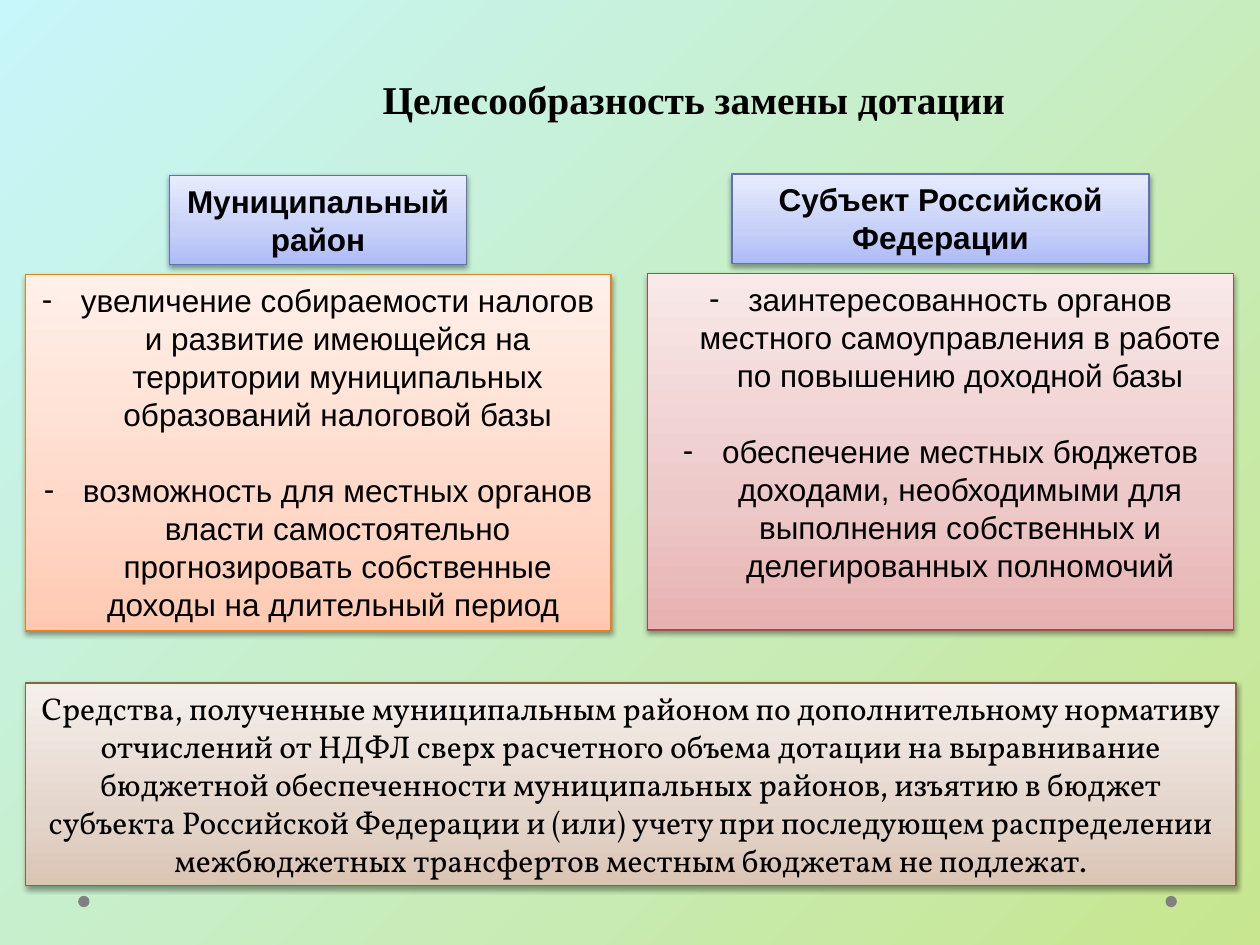
from copy import deepcopy
from lxml.etree import SubElement as Sub
from pptx import Presentation
from pptx.dml.color import RGBColor as Rgb
from pptx.enum.shapes import MSO_SHAPE as Kind
from pptx.enum.text import MSO_ANCHOR as Anchor, PP_ALIGN as Align
from pptx.oxml.ns import qn
from pptx.util import Inches, Pt

COLS, ROWS = 100, 75
WIDE, HIGH = Inches(10), Inches(7.5)
LEAD = Pt(21.7)
HUES = {
    "back": ["C7F6FB", "C7E68F"],
    "head": ["ADBBF6", "C5CFF8", "E8ECFD", "5C72B2"],
    "peach": ["FFC9B1", "FFD8C8", "FFF0EA", "E6811C"],
    "rose": ["E8B0B0", "EDC8C8", "F9E9E9", "9A4E4E"],
    "sand": ["DAC4B4", "E4D5CB", "F5EFEB", "836445"],
    "dot": "808080",
    "ink": "000000",
}


def span(box):
    """Turn a box in grid columns and rows into slide lengths."""
    x, y, w, h = box
    return [int(n) for n in (x * WIDE / COLS, y * HIGH / ROWS, w * WIDE / COLS, h * HIGH / ROWS)]


def tint(fill, hues, angle):
    """Set the stop colours and the angle of a gradient fill."""
    for stop, hue in zip(fill.gradient_stops, hues):
        stop.color.rgb = Rgb.from_string(hue)
    fill.gradient_angle = angle


def shade(card):
    """Give a card a soft shadow below it."""
    card.shadow.inherit = False
    glow = Sub(card._element.spPr.find(qn("a:effectLst")), qn("a:outerShdw"),
               blurRad=str(Pt(3.1)), dist=str(Pt(1.6)), dir="5400000", rotWithShape="0")
    hue = Sub(glow, qn("a:srgbClr"), val=HUES["ink"])
    Sub(hue, qn("a:alpha"), val="38000")


def write(para, text, font, size=18, bold=False, lead=LEAD):
    """Fill a centred paragraph with one run."""
    para.alignment = Align.CENTER
    para.line_spacing = lead
    run = para.add_run()
    run.text = text
    run.font.name, run.font.size, run.font.bold = font, Pt(size), bold
    run.font.color.rgb = Rgb.from_string(HUES["ink"])


def dash(para):
    """Give a paragraph a hanging dash."""
    props = para._p.get_or_add_pPr()
    props.set("marL", str(Inches(0.31)))
    props.set("indent", str(Inches(-0.31)))
    Sub(props, qn("a:buFont"), typeface="Arial")
    Sub(props, qn("a:buChar"), char="-")


def card(slide, box, hues, texts, font="Arial", bold=False, list_=False):
    """Place a gradient card with its paragraphs."""
    shape = slide.shapes.add_shape(Kind.RECTANGLE, *span(box))
    shape.fill.gradient()
    stops = shape._element.spPr.find(".//" + qn("a:gsLst"))
    stops.insert(1, deepcopy(stops[0]))
    stops[1].set("pos", "35000")
    tint(shape.fill, hues[:3], 90)
    shape.line.color.rgb = Rgb.from_string(hues[3])
    shape.line.width = Pt(0.75)
    shade(shape)
    frame = shape.text_frame
    frame.word_wrap = True
    frame.vertical_anchor = Anchor.TOP
    for n, text in enumerate(texts):
        para = frame.add_paragraph() if n else frame.paragraphs[0]
        if list_:
            dash(para)
        if n:
            para.space_before = LEAD
        write(para, text, font, bold=bold)


def column(slide, box, wide, hues, head, items):
    """Place a centred heading card above a card of points."""
    x, y, w, h = box
    card(slide, (x + (w - wide) / 2, y, wide, 7.1), HUES["head"], [head], bold=True)
    card(slide, (x, y + 7.9, w, h - 7.9), hues, items, list_=True)


def title(slide, box, text):
    """Place the slide heading."""
    frame = slide.shapes.add_textbox(*span(box)).text_frame
    frame.word_wrap = True
    frame.vertical_anchor = Anchor.BOTTOM
    write(frame.paragraphs[0], text, "Times New Roman", 22.5, True, Pt(58))


def dots(slide, box):
    """Place a dot at each end of the box."""
    x, y, w, h = box
    for left in (x, x + w - h):
        dot = slide.shapes.add_shape(Kind.OVAL, *span((left, y, h, h)))
        dot.shadow.inherit = False
        dot.fill.solid()
        dot.fill.fore_color.rgb = Rgb.from_string(HUES["dot"])
        dot.line.fill.background()


def main():
    """Build the slide and save it."""
    deck = Presentation()
    deck.slide_width, deck.slide_height = WIDE, HIGH
    slide = deck.slides.add_slide(deck.slide_layouts[6])
    back = slide.background.fill
    back.gradient()
    tint(back, HUES["back"], 315)
    dots(slide, (6.2, 71.1, 87.2, 0.9))
    title(slide, (10.1, 4.1, 90, 6.1), "Целесообразность замены дотации")
    card(slide, (2, 54.2, 96.1, 16.1), HUES["sand"], [
        "Средства, полученные муниципальным районом по дополнительному нормативу "
        "отчислений от НДФЛ сверх расчетного объема дотации на выравнивание "
        "бюджетной обеспеченности муниципальных районов, изъятию в бюджет "
        "субъекта Российской Федерации и (или) учету при последующем распределении "
        "межбюджетных трансфертов местным бюджетам не подлежат."], "Vollkorn")
    column(slide, (2, 13.9, 46.5, 36.2), 23.6, HUES["peach"], "Муниципальный район", [
        "увеличение собираемости налогов и развитие имеющейся на территории "
        "муниципальных образований налоговой базы",
        "возможность для местных органов власти самостоятельно прогнозировать "
        "собственные доходы на длительный период "])
    column(slide, (51.4, 13.8, 46.5, 36.2), 33.1, HUES["rose"], "Субъект Российской Федерации", [
        "заинтересованность органов местного самоуправления в работе "
        "по повышению доходной базы",
        "обеспечение местных бюджетов доходами, необходимыми для выполнения "
        "собственных и делегированных полномочий"])
    deck.save("out.pptx")


if __name__ == "__main__":
    main()
